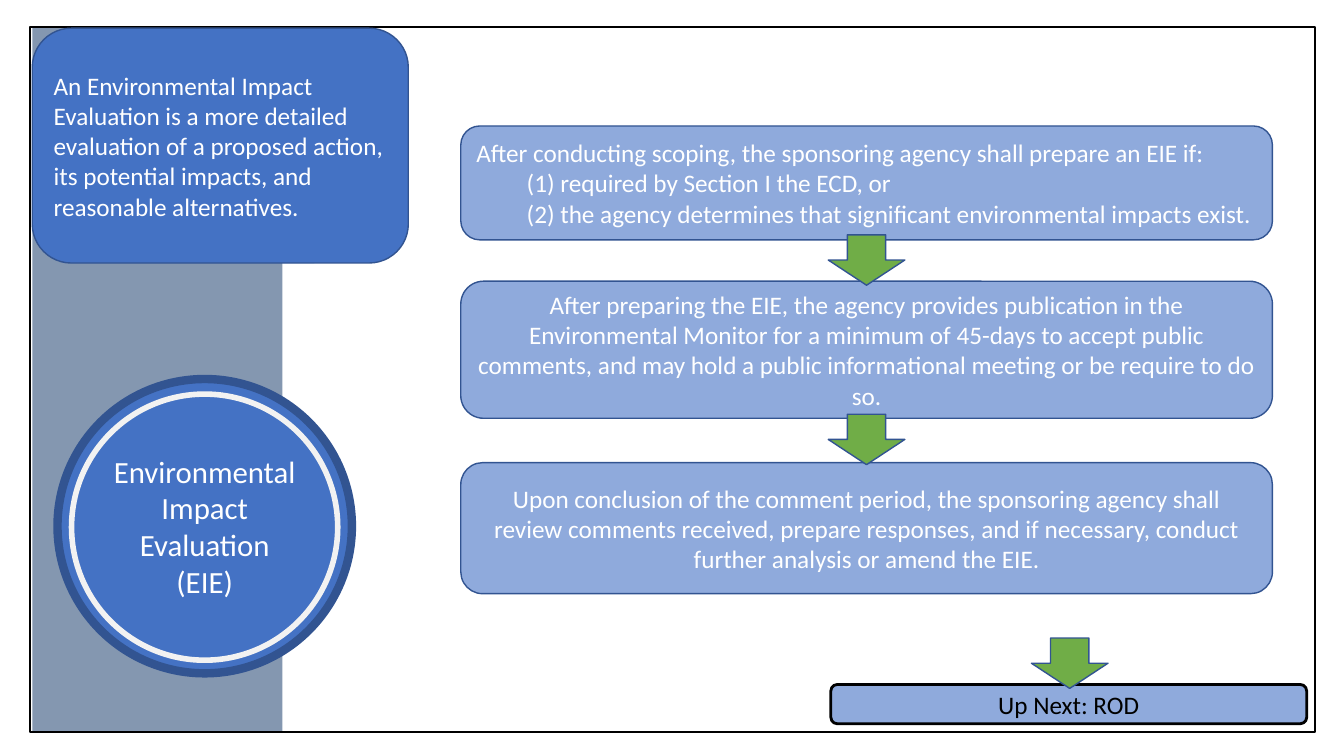
from dataclasses import dataclass

from pptx import Presentation
from pptx.dml.color import RGBColor
from pptx.enum.shapes import MSO_SHAPE
from pptx.enum.text import MSO_ANCHOR, PP_ALIGN
from pptx.util import Inches, Pt

RECT = MSO_SHAPE.RECTANGLE
ROUND = MSO_SHAPE.ROUNDED_RECTANGLE
OVAL = MSO_SHAPE.OVAL
DOWN = MSO_SHAPE.DOWN_ARROW
LEFT, CENTER = PP_ALIGN.LEFT, PP_ALIGN.CENTER
MIDDLE = MSO_ANCHOR.MIDDLE

FONT = "Calibri"
WHITE, BLACK = "FFFFFF", "000000"
BLUE, LIGHT_BLUE, NAVY = "4472C4", "8FAADC", "325491"
SLATE, GREEN, PALE = "8497B0", "70AD47", "F2F2F2"

STEP_LEFT, STEP_WIDTH = 4.57, 8.05
ARROW_WIDTH, ARROW_HEIGHT = 0.76, 0.5
STEP_CENTER = STEP_LEFT + STEP_WIDTH / 2


@dataclass
class Box:
    kind: MSO_SHAPE
    left: float
    top: float
    width: float
    height: float
    fill: str | None = None
    line: str | None = NAVY
    weight: float = 1
    text: str = ""
    align: PP_ALIGN = CENTER
    size: float = 18
    color: str = WHITE


def rgb(value: str) -> RGBColor:
    return RGBColor.from_string(value)


def add_box(s, box: Box):
    sp = s.shapes.add_shape(box.kind, Inches(box.left), Inches(box.top),
                            Inches(box.width), Inches(box.height))
    sp.shadow.inherit = False
    if box.fill:
        sp.fill.solid()
        sp.fill.fore_color.rgb = rgb(box.fill)
    else:
        sp.fill.background()
    if box.line:
        sp.line.color.rgb = rgb(box.line)
        sp.line.width = Pt(box.weight)
    else:
        sp.line.fill.background()
    if box.text:
        write_text(sp, box)
    return sp


def write_text(sp, box: Box) -> None:
    tf = sp.text_frame
    tf.word_wrap = True
    tf.vertical_anchor = MIDDLE
    tf.text = box.text
    for p in tf.paragraphs:
        p.alignment = box.align
        for r in p.runs:
            r.font.name = FONT
            r.font.size = Pt(box.size)
            r.font.color.rgb = rgb(box.color)


def step(top: float, height: float, text: str, align: PP_ALIGN = CENTER) -> Box:
    return Box(ROUND, STEP_LEFT, top, STEP_WIDTH, height, LIGHT_BLUE,
               text=text, align=align)


def arrow(center: float, top: float) -> Box:
    return Box(DOWN, center - ARROW_WIDTH / 2, top, ARROW_WIDTH, ARROW_HEIGHT, GREEN)


def indent_conditions(sp) -> None:
    """Indent every paragraph after the first by half an inch."""
    for p in sp.text_frame.paragraphs[1:]:
        p.level = 1
        pPr = p._p.get_or_add_pPr()
        pPr.set("marL", str(Inches(0.5)))
        pPr.set("indent", "0")


SIDE_BAND = Box(RECT, 0.32, 0.27, 2.48, 6.99, SLATE, None)
SCOPING = step(
    1.25, 1.13,
    "After conducting scoping, the sponsoring agency shall prepare an EIE if:\n"
    "(1) required by Section I the ECD, or\n"
    "(2) the agency determines that significant environmental impacts exist.",
    LEFT)
REMAINING = [
    step(4.59, 1.3,
         "Upon conclusion of the comment period, the sponsoring agency shall "
         "review comments received, prepare responses, and if necessary, "
         "conduct further analysis or amend the EIE."),
    Box(ROUND, 8.24, 6.79, 4.72, 0.39, LIGHT_BLUE, BLACK, 2,
        "Up Next: ROD", color=BLACK),
    Box(RECT, 0.3, 0.27, 12.74, 6.99, None, BLACK, 1.5),
    Box(OVAL, 0.57, 3.76, 2.92, 2.92, BLUE, NAVY, 6,
        "Environmental Impact Evaluation (EIE)", size=22),
    Box(OVAL, 0.71, 3.91, 2.64, 2.64, None, PALE, 4),
    step(2.79, 1.36,
         "After preparing the EIE, the agency provides publication in the "
         "Environmental Monitor for a minimum of 45-days to accept public "
         "comments, and may hold a public informational meeting or be "
         "require to do so."),
    Box(ROUND, 0.32, 0.28, 3.73, 2.33, BLUE,
        text="An Environmental Impact Evaluation is a more detailed evaluation "
             "of a proposed action, its potential impacts, and reasonable "
             "alternatives.",
        align=LEFT),
    arrow(STEP_CENTER, 2.33),
    arrow(STEP_CENTER, 4.11),
    arrow(10.61, 6.33),
]


def main() -> None:
    prs = Presentation()
    prs.slide_width, prs.slide_height = Inches(13.33), Inches(7.5)
    s = prs.slides.add_slide(prs.slide_layouts[6])
    add_box(s, SIDE_BAND)
    indent_conditions(add_box(s, SCOPING))
    for box in REMAINING:
        add_box(s, box)
    prs.save("out.pptx")


if __name__ == "__main__":
    main()
